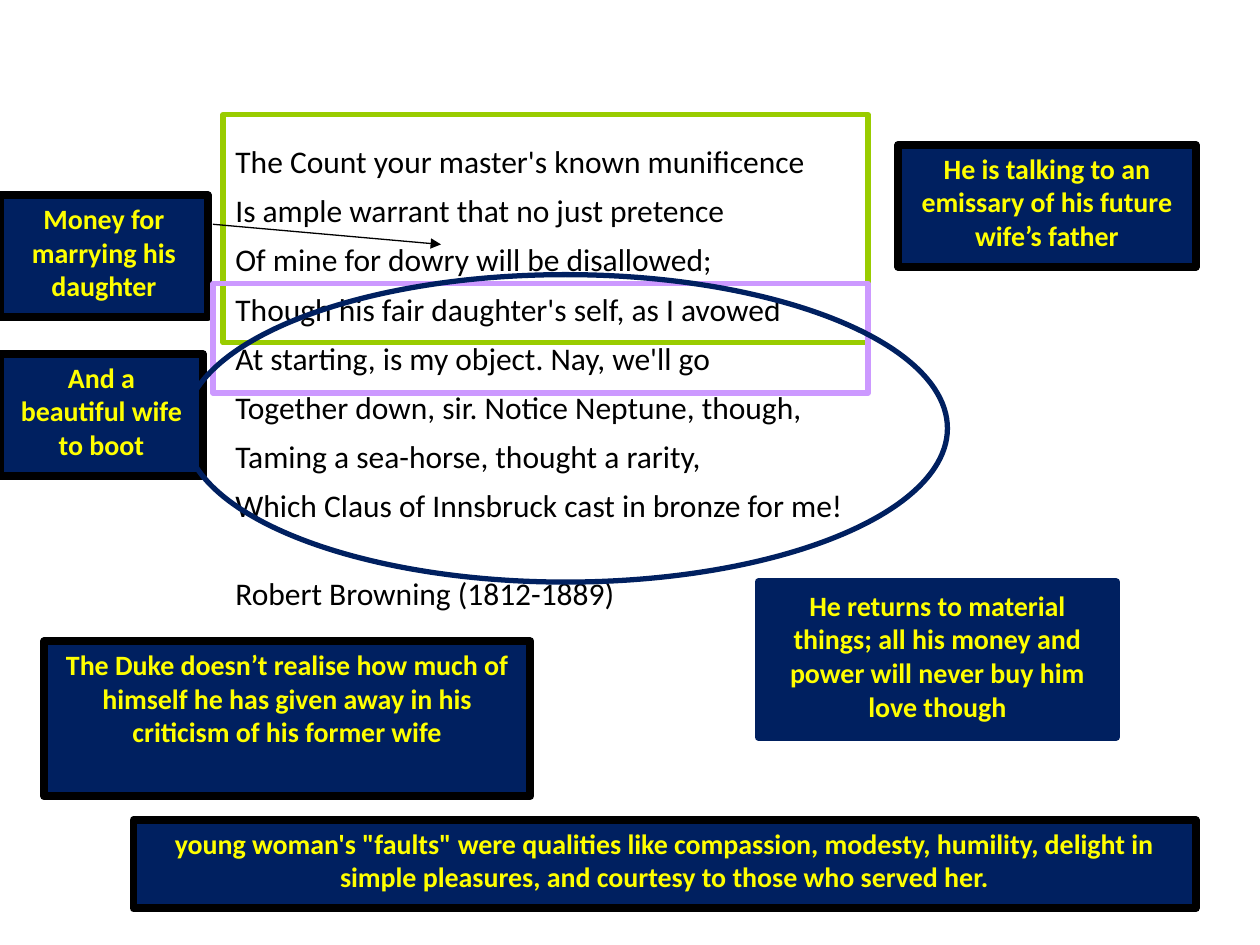
from lxml.etree import SubElement
from pptx import Presentation
from pptx.dml.color import RGBColor
from pptx.enum.shapes import MSO_CONNECTOR, MSO_SHAPE
from pptx.enum.text import MSO_ANCHOR, PP_ALIGN
from pptx.oxml.ns import qn
from pptx.util import Inches, Pt

NAVY, BLACK, YELLOW, WHITE = "002060", "000000", "FFFF00", "FFFFFF"
NOTE_FONT = {"name": "Calibri", "size": Pt(16), "bold": True}
POEM_FONT = {"name": "Calibri", "size": Pt(18), "bold": False}
NOTE_FRAME = {"word_wrap": True, "vertical_anchor": MSO_ANCHOR.TOP}

VERSES = [
    "The Count your master's known munificence",
    "Is ample warrant that no just pretence",
    "Of mine for dowry will be disallowed;",
    "Though his fair daughter's self, as I avowed",
    "At starting, is my object. Nay, we'll go",
    "Together down, sir. Notice Neptune, though,",
    "Taming a sea-horse, thought a rarity,",
    "Which Claus of Innsbruck cast in bronze for me!",
]
POET = "Robert Browning (1812-1889)"


def paint(color_format, hex_color):
    """Set a colour from a hex string."""
    color_format.rgb = RGBColor.from_string(hex_color)


def apply_format(target, values):
    """Set each attribute of the target from a dict of values."""
    for attribute, value in values.items():
        setattr(target, attribute, value)


def add_poem(slide, box):
    """Add the verses and the poet's name on a translucent white panel."""
    poem = slide.shapes.add_textbox(*map(Inches, box))
    poem.fill.solid()
    paint(poem.fill.fore_color, WHITE)
    white = poem.fill._xPr.find(qn("a:solidFill"))[0]
    SubElement(white, qn("a:alpha"), val="70000")
    apply_format(poem.text_frame, NOTE_FRAME)
    stanza = poem.text_frame.paragraphs[0]
    stanza.text = "\v".join(VERSES)
    credit = poem.text_frame.add_paragraph()
    credit.text = POET
    credit.space_before = Pt(22)
    for paragraph in (stanza, credit):
        paragraph.line_spacing = 1.3
        for run in paragraph.runs:
            apply_format(run.font, POEM_FONT)
            paint(run.font.color, BLACK)


def add_note(slide, box, comment, border=BLACK):
    """Add a navy comment box with centred yellow text."""
    note = slide.shapes.add_shape(MSO_SHAPE.RECTANGLE, *map(Inches, box))
    note.shadow.inherit = False
    note.fill.solid()
    paint(note.fill.fore_color, NAVY)
    paint(note.line.color, border)
    note.line.width = Pt(4.5)
    apply_format(note.text_frame, NOTE_FRAME)
    paragraph = note.text_frame.paragraphs[0]
    paragraph.text = comment
    paragraph.alignment = PP_ALIGN.CENTER
    font = paragraph.runs[0].font
    apply_format(font, NOTE_FONT)
    paint(font.color, YELLOW)


def add_highlight(slide, outline, box, hex_color):
    """Add an unfilled outline around the verses a note refers to."""
    highlight = slide.shapes.add_shape(outline, *map(Inches, box))
    highlight.shadow.inherit = False
    highlight.fill.background()
    paint(highlight.line.color, hex_color)
    highlight.line.width = Pt(3)


def add_arrow(slide, ends):
    """Add a thin black arrow between two points."""
    arrow = slide.shapes.add_connector(MSO_CONNECTOR.STRAIGHT, *map(Inches, ends))
    paint(arrow.line.color, BLACK)
    arrow.line.width = Pt(0.75)
    SubElement(arrow.line._get_or_add_ln(), qn("a:tailEnd"), type="triangle")
    SubElement(arrow._element.spPr, qn("a:effectLst"))


def main():
    """Build the annotated poem slide."""
    deck = Presentation()
    deck.slide_width, deck.slide_height = Inches(10), Inches(7.5)
    slide = deck.slides.add_slide(deck.slide_layouts[6])

    add_poem(slide, (1.77, 0.99, 5.67, 4.01))
    add_note(slide, (7.13, 1.15, 2.36, 0.97),
             "He is talking to an emissary of his future wife’s father")
    add_highlight(slide, MSO_SHAPE.RECTANGLE, (1.77, 0.91, 5.12, 1.81), "99CC00")
    add_note(slide, (0, 1.55, 1.65, 0.97), "Money for marrying his daughter")
    add_arrow(slide, (1.69, 1.78, 3.5, 1.94))
    add_note(slide, (0, 2.81, 1.61, 0.97), "And a beautiful wife to boot")
    add_highlight(slide, MSO_SHAPE.RECTANGLE, (1.69, 2.25, 5.2, 0.87), "CC99FF")
    add_note(slide, (6.02, 4.62, 2.84, 1.23),
             "He returns to material things; all his money and power "
             "will never buy him love though", border=NAVY)
    add_highlight(slide, MSO_SHAPE.OVAL, (1.46, 2.18, 6.06, 2.44), NAVY)
    add_note(slide, (1.06, 6.51, 8.43, 0.7),
             "young woman's \"faults\" were qualities like compassion, modesty, "
             "humility, delight in simple pleasures, and courtesy to those who "
             "served her.")
    add_note(slide, (0.35, 5.09, 3.86, 1.23),
             "The Duke doesn’t realise how much of himself he has given away "
             "in his criticism of his former wife")

    deck.save("out.pptx")


if __name__ == "__main__":
    main()
